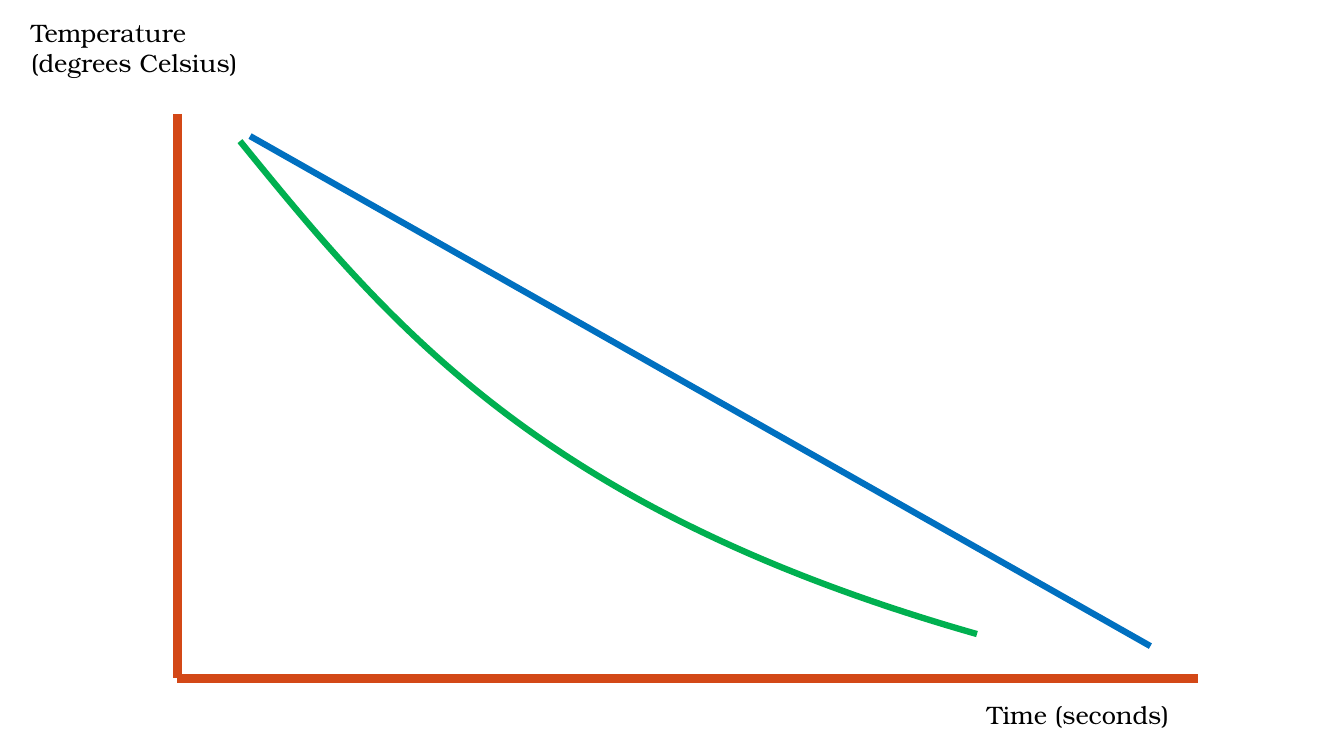
import pptx
import pptx.util
import pptx.dml.color
import pptx.enum.shapes
import pptx.enum.text
import pptx.oxml.ns
import pptx.oxml.xmlchemy
from pptx.util import Inches

COLOURS = {"axis": "D34817", "linear": "0070C0", "curved": "00B050", "text": "000000"}
FONT = "TeX Gyre Bonum"
ORIGIN = (1.76, 6.73)


def rgb(name):
    return pptx.dml.color.RGBColor.from_string(COLOURS[name])


def inches(values):
    return [Inches(value) for value in values]


def style_line(line, colour, width):
    line.color.rgb = rgb(colour)
    line.width = pptx.util.Pt(width)


def add_line(slide, start, end, colour, width):
    segment = slide.shapes.add_connector(
        pptx.enum.shapes.MSO_CONNECTOR.STRAIGHT, *inches((*start, *end)))
    style_line(segment.line, colour, width)
    segment._element.spPr.append(pptx.oxml.xmlchemy.OxmlElement("a:effectLst"))


def add_curve(slide, start, controls, colour, width):
    builder = slide.shapes.build_freeform(*inches(start))
    builder.add_line_segments([inches(point) for point in controls], close=False)
    curve = builder.convert_to_shape()
    curve.shadow.inherit = False
    curve.fill.background()
    style_line(curve.line, colour, width)
    outline = curve._element.find(".//" + pptx.oxml.ns.qn("a:path"))
    bezier = pptx.oxml.xmlchemy.OxmlElement("a:cubicBezTo")
    for straight in outline.findall(pptx.oxml.ns.qn("a:lnTo")):
        bezier.append(straight[0])
        outline.remove(straight)
    outline.append(bezier)


def add_text(slide, text, left, top, width, height, size=18, colour="text"):
    label = slide.shapes.add_textbox(*inches((left, top, width, height)))
    frame = label.text_frame
    frame.word_wrap = True
    frame.auto_size = pptx.enum.text.MSO_AUTO_SIZE.SHAPE_TO_FIT_TEXT
    run = frame.paragraphs[0].add_run()
    run.text = text
    run.font.name = FONT
    run.font.size = pptx.util.Pt(size)
    run.font.color.rgb = rgb(colour)


def main():
    deck = pptx.Presentation()
    deck.slide_width = Inches(13.33)
    deck.slide_height = Inches(7.5)
    slide = deck.slides.add_slide(deck.slide_layouts[6])

    add_line(slide, (1.76, 1.13), ORIGIN, "axis", 6)
    add_line(slide, (11.88, 6.73), ORIGIN, "axis", 6)
    add_text(slide, "Temperature (degrees Celsius)", left=0.21, top=0.12, width=2.57, height=0.71)
    add_text(slide, "Time (seconds)", left=9.69, top=6.89, width=2.93, height=0.4)
    add_line(slide, (2.48, 1.35), (11.41, 6.41), "linear", 4.5)
    add_curve(slide, (2.38, 1.4), [(3.87, 3.23), (5.37, 5.06), (9.69, 6.29)], "curved", 4.5)

    deck.save("out.pptx")


if __name__ == "__main__":
    main()
